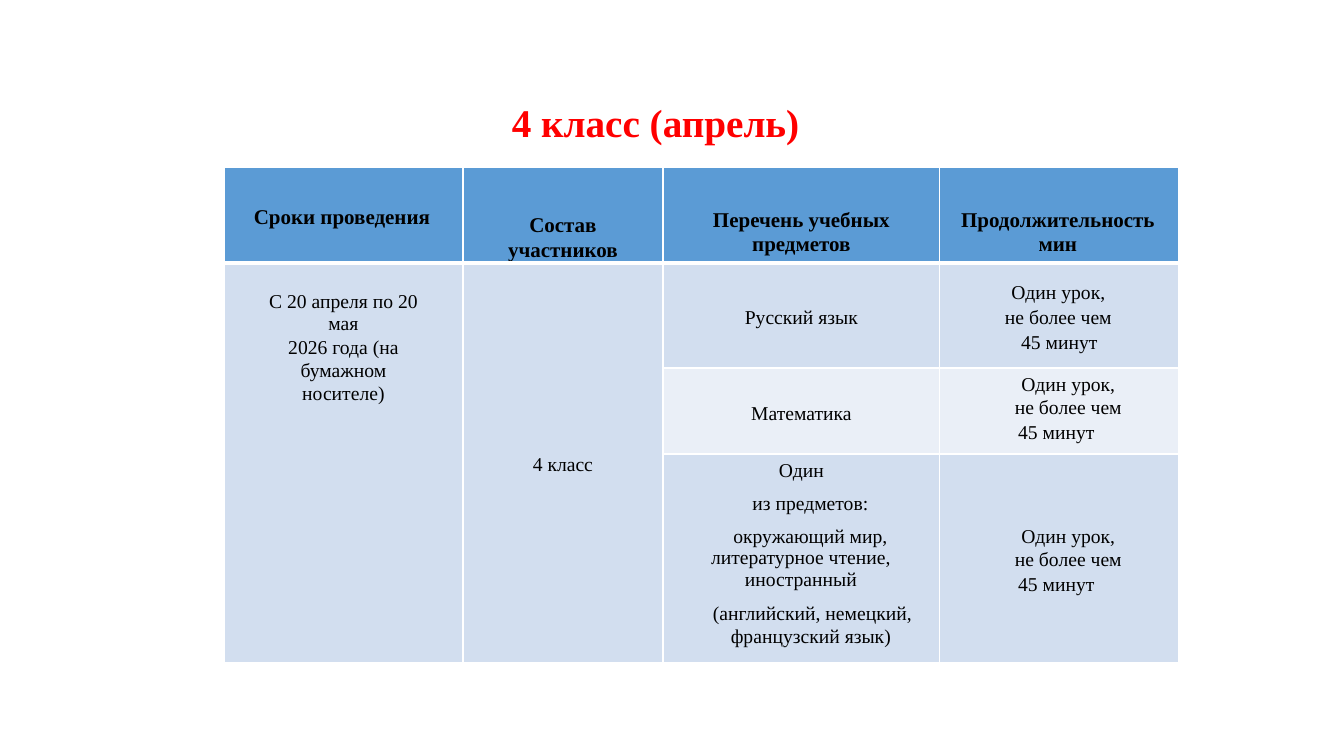
"""Build the slide with the April test schedule for grade 4."""
from lxml.etree import SubElement
from pptx import Presentation
from pptx.dml.color import RGBColor
from pptx.enum.text import MSO_ANCHOR, PP_ALIGN
from pptx.oxml.ns import qn
from pptx.util import Pt

THEME = {
    "font": "Times New Roman", "title": 28, "head": 15, "body": 14,
    "red": "FF0000", "black": "000000", "white": "FFFFFF",
    "blue": "5B9BD5", "pale": "D2DEEF", "light": "EAEFF7",
}
WIDE, HIGH = 1344, 756
SCALE = 12192000 / WIDE


def px(count):
    """Turn pixels into EMU."""
    return round(count * SCALE)


def write(para, text, size="body", color="black", bold=False,
          left=0, first=0, right=0, line=1.07, after=8):
    """Fill one centred paragraph."""
    props = para._p.get_or_add_pPr()
    for name, value in (("marL", left), ("indent", first), ("marR", right)):
        props.set(name, str(px(value)))
    para.alignment = PP_ALIGN.CENTER
    para.line_spacing = line
    para.space_after = Pt(after)
    run = para.add_run()
    run.text = text
    run.font.name = THEME["font"]
    run.font.size = Pt(THEME[size])
    run.font.bold = bold
    run.font.color.rgb = RGBColor.from_string(THEME[color])


deck = Presentation()
deck.slide_width, deck.slide_height = px(WIDE), px(HIGH)
slide = deck.slides.add_slide(deck.slide_layouts[6])

title = slide.shapes.add_textbox(px(62), px(41), px(1187), px(587)).text_frame
title.word_wrap = True
title.margin_top = px(57)
write(title.paragraphs[0], "4 класс (апрель)", size="title", color="red",
      bold=True, line=1.0, after=0)

cols = [239, 200, 277, 239]
rows = [96, 105, 86, 207]
grid = slide.shapes.add_table(len(rows), len(cols), px(224), px(167),
                              px(sum(cols)), px(sum(rows))).table
grid.first_row = grid.horz_banding = False
for col, size in zip(grid.columns, cols):
    col.width = px(size)
for row, size in zip(grid.rows, rows):
    row.height = px(size)

fills = ["blue", "pale", "light", "pale"]
for r, tone in enumerate(fills):
    for c in range(len(cols)):
        cell = grid.cell(r, c)
        props = cell._tc.get_or_add_tcPr()
        for side in "LRTB":
            thick = (r, side) in ((0, "B"), (1, "T"))
            edge = SubElement(props, qn("a:ln" + side), w=str(Pt(3 if thick else 1)))
            paint = SubElement(edge, qn("a:solidFill"))
            SubElement(paint, qn("a:srgbClr"), val=THEME["white"])
        shade = "pale" if r and c < 2 else tone
        cell.fill.solid()
        cell.fill.fore_color.rgb = RGBColor.from_string(THEME[shade])
        cell.margin_left = cell.margin_right = px(9)
        cell.margin_top, cell.margin_bottom = px(5), px(1)
for c in range(2):
    grid.cell(1, c).merge(grid.cell(3, c))

TOP, MID, LOW = MSO_ANCHOR.TOP, MSO_ANCHOR.MIDDLE, MSO_ANCHOR.BOTTOM
head = dict(size="head", bold=True)
date = dict(left=25, right=25)
even = dict(left=13, right=15, line=1.05, after=1.4)
skew = dict(left=16, first=6, right=4, line=1.03, after=0.9)
topic = dict(left=3, first=19, right=4, line=0.99)


def_time = ["Один урок,", "не более чем", "45 минут"]
cells = [
    (0, 0, MID, 5, [("Сроки проведения", dict(head, left=4, right=7))]),
    (0, 1, LOW, 5, [("Состав участников", head)]),
    (0, 2, TOP, 40, [("Перечень учебных предметов", dict(head, left=34, right=34))]),
    (0, 3, TOP, 40, [("Продолжительность мин", dict(head, left=7, right=10))]),
    (1, 0, TOP, 27, [("С 20 апреля по 20 мая", dict(date, line=1.04, after=0.1)),
                     ("2026 года (на бумажном носителе)", date)]),
    (1, 1, MID, 5, [("4 класс", {})]),
    (1, 2, MID, 5, [("Русский язык", {})]),
    (1, 3, MID, 5, zip(def_time, [even, even, {}])),
    (2, 2, MID, 5, [("Математика", {})]),
    (2, 3, TOP, 5, zip(def_time, [skew, skew, dict(right=6)])),
    (3, 2, TOP, 5, [("Один", {}), ("из предметов:", topic),
                    ("окружающий мир, литературное чтение, иностранный", topic),
                    ("(английский, немецкий, французский язык)",
                     dict(left=23, first=3, right=4))]),
    (3, 3, MID, 5, zip(def_time, [skew, skew, dict(right=6)])),
]
for r, c, anchor, top, lines in cells:
    cell = grid.cell(r, c)
    cell.vertical_anchor = anchor
    cell.margin_top = px(top)
    frame = cell.text_frame
    for n, (text, style) in enumerate(lines):
        write(frame.add_paragraph() if n else frame.paragraphs[0], text, **style)

deck.save("out.pptx")
